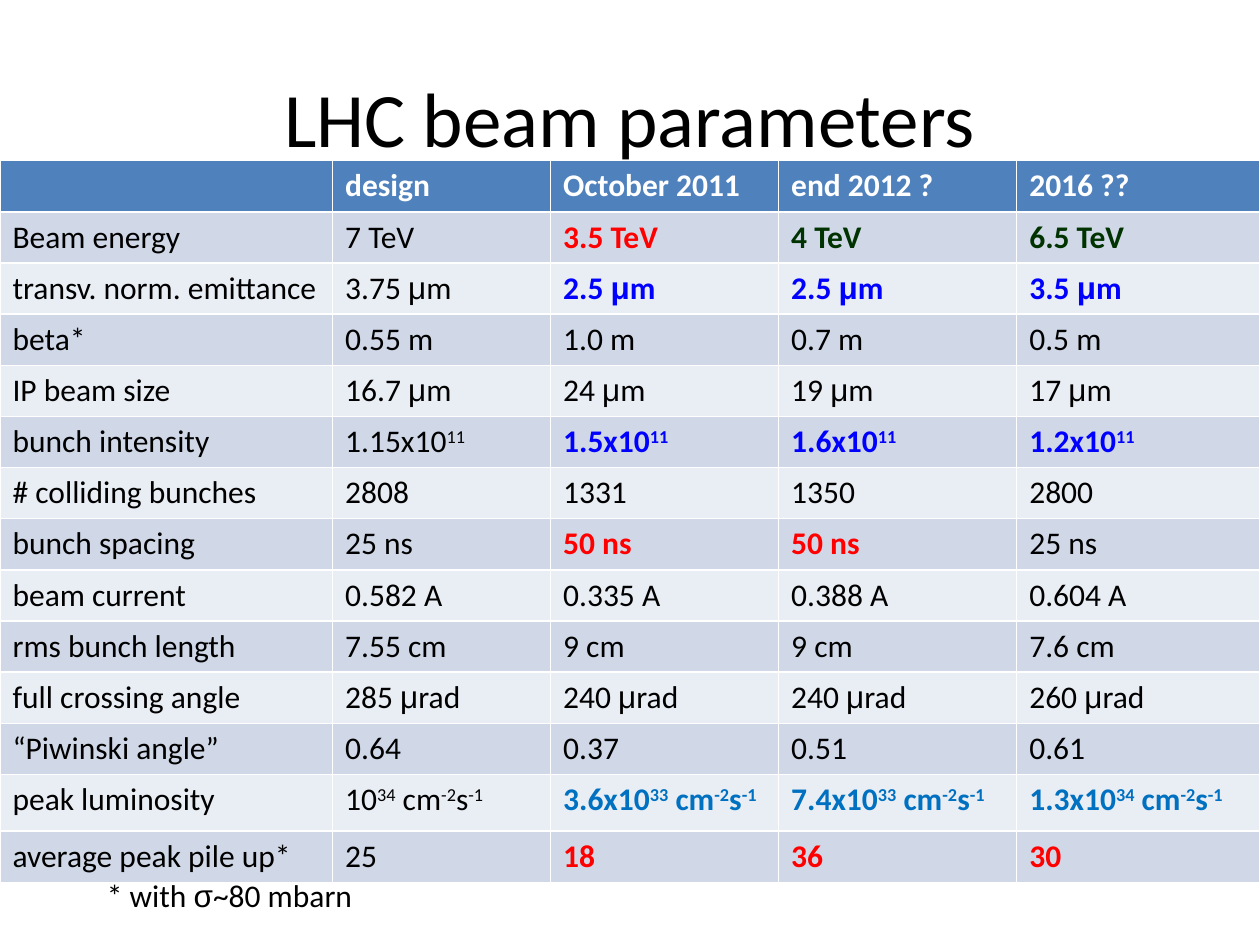
import dataclasses
import itertools

import pptx
import pptx.dml.color
import pptx.enum.text
import pptx.util


@dataclasses.dataclass(frozen=True)
class Theme:
    font: str = "Calibri"
    greek_font: str = "Arial"
    title_size: int = 44
    body_size: int = 18
    text: str = "000000"
    header_text: str = "FFFFFF"
    header_fill: str = "4F81BD"
    bands: tuple = ("D0D8E8", "E9EDF4")
    red: str = "FF0000"
    blue: str = "0000FF"
    green: str = "003300"
    sky: str = "0070C0"


THEME = Theme()
HEADER = ("", "design", "October 2011", "end 2012 ?", "2016 ??")
PARAMETERS = (
    ("Beam energy", "7 TeV", "3.5 TeV", "4 TeV", "6.5 TeV"),
    ("transv. norm. emittance", "3.75 μm", "2.5 μm", "2.5 μm", "3.5 μm"),
    ("beta*", "0.55 m", "1.0 m", "0.7 m", "0.5 m"),
    ("IP beam size", "16.7 μm", "24 μm", "19 μm", "17 μm"),
    ("bunch intensity", "1.15x10^11^", "1.5x10^11^", "1.6x10^11^", "1.2x10^11^"),
    ("# colliding bunches", "2808", "1331", "1350", "2800"),
    ("bunch spacing", "25 ns", "50 ns", "50 ns", "25 ns"),
    ("beam current", "0.582 A", "0.335 A", "0.388 A", "0.604 A"),
    ("rms bunch length", "7.55 cm", "9 cm", "9 cm", "7.6 cm"),
    ("full crossing angle", "285 μrad", "240 μrad", "240 μrad", "260 μrad"),
    ("“Piwinski angle”", "0.64", "0.37", "0.51", "0.61"),
    ("peak luminosity", "10^34^ cm^-2^s^-1^", "3.6x10^33^ cm^-2^s^-1^",
     "7.4x10^33^ cm^-2^s^-1^", "1.3x10^34^ cm^-2^s^-1^"),
    ("average peak pile up*", "25", "18", "36", "30"),
)
HIGHLIGHTS = {
    "Beam energy": (THEME.red, THEME.green, THEME.green),
    "transv. norm. emittance": (THEME.blue,) * 3,
    "bunch intensity": (THEME.blue,) * 3,
    "bunch spacing": (THEME.red, THEME.red, None),
    "peak luminosity": (THEME.sky,) * 3,
    "average peak pile up*": (THEME.red,) * 3,
}
COLUMN_SHARES = (0.264, 0.173, 0.181, 0.189, 0.193)
TABLE_HEIGHT = 5.73 / 7.5
LUMINOSITY_HEIGHT = 0.06


class SlideBuilder:
    def __init__(self, deck, theme):
        self.deck = deck
        self.theme = theme
        self.page = deck.slides.add_slide(deck.slide_layouts[5])

    def across(self, share):
        return round(self.deck.slide_width * share)

    def down(self, share):
        return round(self.deck.slide_height * share)

    def frame(self, left, top, width, height):
        return self.across(left), self.down(top), self.across(width), self.down(height)

    def fill_text(self, para, text, size, color, bold=False):
        para.font.size = pptx.util.Pt(size)
        para.font.bold = bold
        para.font.color.rgb = pptx.dml.color.RGBColor.from_string(color)
        for index, piece in enumerate(text.split("^")):
            for greek, letters in itertools.groupby(piece, lambda letter: letter in "μσ"):
                span = para.add_run()
                span.text = "".join(letters)
                span.font.name = self.theme.greek_font if greek else self.theme.font
                if index % 2:
                    span._r.get_or_add_rPr().set("baseline", "30000")

    def title(self, text, *place):
        box = self.page.shapes.title
        box.left, box.top, box.width, box.height = self.frame(*place)
        box.text_frame.vertical_anchor = pptx.enum.text.MSO_ANCHOR.MIDDLE
        para = box.text_frame.paragraphs[0]
        para.alignment = pptx.enum.text.PP_ALIGN.CENTER
        self.fill_text(para, text, self.theme.title_size, self.theme.text)

    def note(self, text, *place):
        box = self.page.shapes.add_textbox(*self.frame(*place))
        box.text_frame.word_wrap = False
        box.text_frame.auto_size = pptx.enum.text.MSO_AUTO_SIZE.SHAPE_TO_FIT_TEXT
        self.fill_text(box.text_frame.paragraphs[0], text, self.theme.body_size, self.theme.text)

    def cell(self, cell, text, fill, color, bold):
        cell.fill.solid()
        cell.fill.fore_color.rgb = pptx.dml.color.RGBColor.from_string(fill)
        self.fill_text(cell.text_frame.paragraphs[0], text, self.theme.body_size, color, bold)

    def table(self, header, rows, highlights, left, top):
        grid = self.page.shapes.add_table(
            len(rows) + 1, len(header), *self.frame(left, top, 1, TABLE_HEIGHT)).table
        for column, share in zip(grid.columns, COLUMN_SHARES):
            column.width = self.across(share)
        usual_height = (TABLE_HEIGHT - LUMINOSITY_HEIGHT) / len(rows)
        for line, values in zip(grid.rows, (header, *rows)):
            tall = values[0] == "peak luminosity"
            line.height = self.down(LUMINOSITY_HEIGHT if tall else usual_height)
        for cell, text in zip(grid.rows[0].cells, header):
            self.cell(cell, text, self.theme.header_fill, self.theme.header_text, True)
        for number, values in enumerate(rows):
            colors = (None, None, *highlights.get(values[0], (None,) * 3))
            for cell, text, color in zip(grid.rows[number + 1].cells, values, colors):
                self.cell(cell, text, self.theme.bands[number % 2],
                          color or self.theme.text, bool(color))


def main():
    deck = pptx.Presentation()
    deck.slide_width = pptx.util.Inches(10)
    deck.slide_height = pptx.util.Inches(7.5)
    slide = SlideBuilder(deck, THEME)
    slide.title("LHC beam parameters", 0, 0.04, 1, 1 / 6)
    slide.table(HEADER, PARAMETERS, HIGHLIGHTS, 0, 0.17)
    slide.note("* with σ~80 mbarn", 0.075, 0.92, 0.22, 0.05)
    deck.save("out.pptx")


if __name__ == "__main__":
    main()
